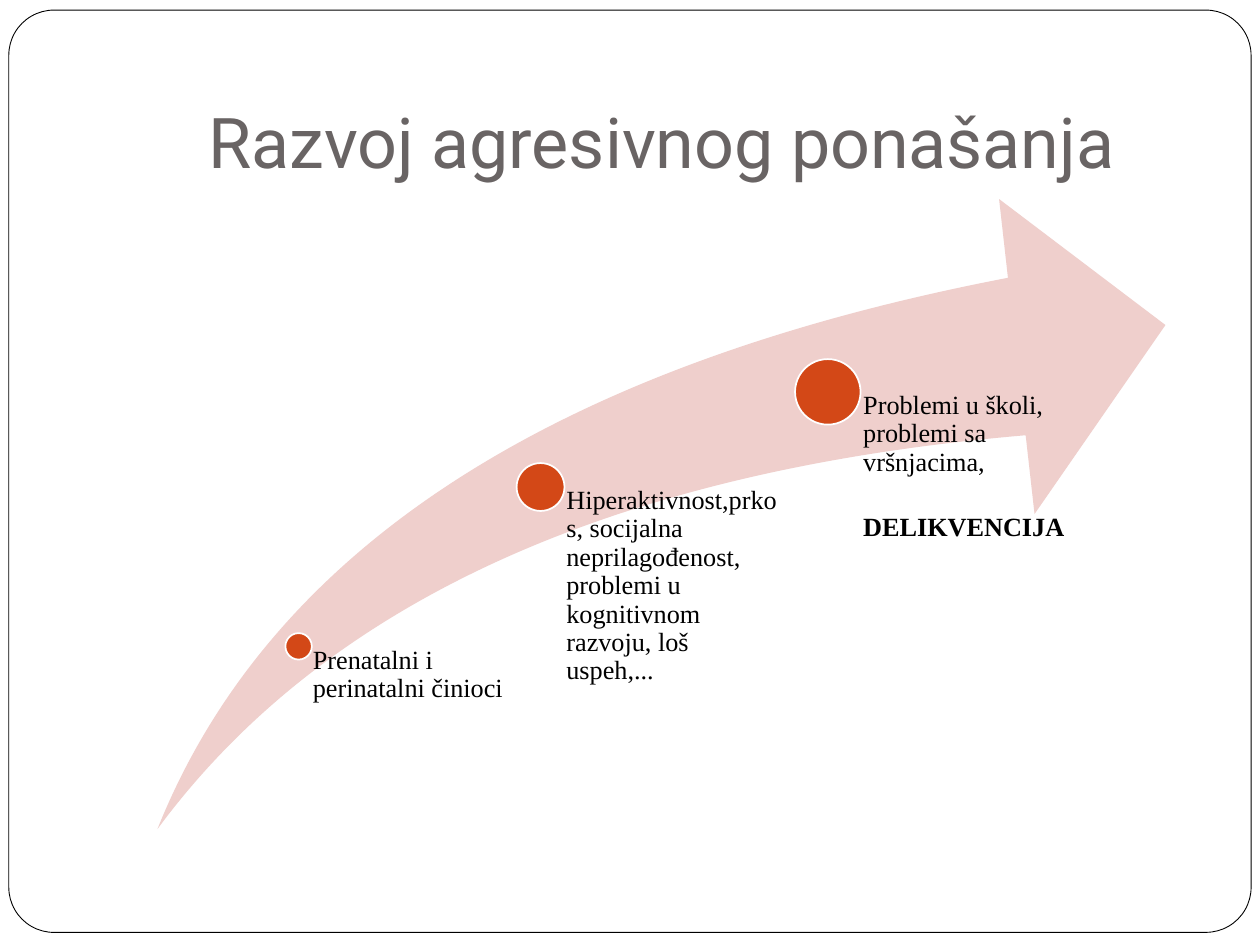
from dataclasses import dataclass

from pptx import Presentation
from pptx.dml.color import RGBColor
from pptx.enum.shapes import MSO_SHAPE
from pptx.enum.text import MSO_ANCHOR, MSO_AUTO_SIZE, PP_ALIGN
from pptx.util import Inches, Pt

WIDE, HIGH = 10, 7.5


@dataclass(frozen=True)
class Theme:
    paper: str = "FFFFFF"
    ink: str = "000000"
    grey: str = "696464"
    pink: str = "EFCFCC"
    rust: str = "D34817"
    head: str = "Roboto"
    body: str = "Times New Roman"
    large: float = 40
    small: float = 15


class Page:
    """Draws on one slide; lengths are inches on its 10 by 7.5 grid."""

    def __init__(self, deck, theme):
        self.theme = theme
        self.slide = deck.slides.add_slide(deck.slide_layouts[5])

    def shape(self, kind, box, fill, line=None, width=1, adjust=()):
        item = self.slide.shapes.add_shape(kind, *map(Inches, box))
        item.shadow.inherit = False
        item.fill.solid()
        item.fill.fore_color.rgb = RGBColor.from_string(fill)
        if line:
            item.line.color.rgb = RGBColor.from_string(line)
            item.line.width = Pt(width)
        else:
            item.line.fill.background()
        for i, value in enumerate(adjust):
            item.adjustments[i] = value
        return item

    def run(self, para, text, font, size, color, bold=None):
        run = para.add_run()
        run.text = text
        run.font.name, run.font.size, run.font.bold = font, Pt(size), bold
        run.font.color.rgb = RGBColor.from_string(color)

    def inset(self, frame, left, top, right, bottom):
        frame.word_wrap = True
        frame.auto_size = MSO_AUTO_SIZE.NONE
        frame.margin_left, frame.margin_top = Inches(left), Inches(top)
        frame.margin_right, frame.margin_bottom = Inches(right), Inches(bottom)

    def border(self):
        """Puts the rounded page frame behind everything else."""
        t = self.theme
        item = self.shape(MSO_SHAPE.ROUNDED_RECTANGLE, (0.07, 0.08, 9.86, 7.32),
                          t.paper, t.ink, 0.5, (0.049,))
        self.slide.shapes.title._element.addprevious(item._element)

    def title(self, text, box):
        t = self.theme
        item = self.slide.shapes.title
        item.left, item.top, item.width, item.height = map(Inches, box)
        frame = item.text_frame
        self.inset(frame, 0.1, 0.05, 0.1, 0.1)
        frame.vertical_anchor = MSO_ANCHOR.BOTTOM
        para = frame.paragraphs[0]
        para.alignment = PP_ALIGN.CENTER
        self.run(para, text, t.head, t.large, t.grey)

    def stage(self, x, y, size, width, base, lines):
        """Centres a dot on x, y and hangs its text from there down to base."""
        t = self.theme
        self.shape(MSO_SHAPE.OVAL, (x - size / 2, y - size / 2, size, size),
                   t.rust, t.paper)
        box = self.slide.shapes.add_textbox(
            *map(Inches, (x, y, width, base - y)))
        frame = box.text_frame
        self.inset(frame, size * 0.54, 0, 0, 0)
        for i, (text, bold) in enumerate(lines):
            para = frame.add_paragraph() if i else frame.paragraphs[0]
            para.line_spacing = 0.9
            para.space_before = Pt(21 if i else 0)
            self.run(para, text, t.body, t.small, t.ink, bold)


def main():
    deck = Presentation()
    deck.slide_width, deck.slide_height = Inches(WIDE), Inches(HIGH)
    theme = Theme()
    page = Page(deck, theme)
    page.border()
    page.title("Razvoj agresivnog ponašanja", (1, 0.3, 8.5, 1.25))

    left, top, width, height = arrow = 1.25, 1.58, 8, 5
    page.shape(MSO_SHAPE.SWOOSH_ARROW, arrow, theme.pink, adjust=(0.25, 0.25))
    # Each stage: centre as shares of the arrow, dot size, text width, lines
    stages = [
        (0.14, 0.71, 0.21, 1.86, [("Prenatalni i perinatalni činioci", None)]),
        (0.38, 0.457, 0.38, 1.92, [
            ("Hiperaktivnost,prkos, socijalna neprilagođenost, "
             "problemi u kognitivnom razvoju, loš uspeh,...", None)]),
        (0.665, 0.306, 0.52, 1.92, [
            ("Problemi u školi, problemi sa vršnjacima,", None),
            ("DELIKVENCIJA", True)]),
    ]
    for across, down, size, span, lines in stages:
        page.stage(left + across * width, top + down * height, size, span,
                   top + height, lines)
    deck.save("out.pptx")


if __name__ == "__main__":
    main()
